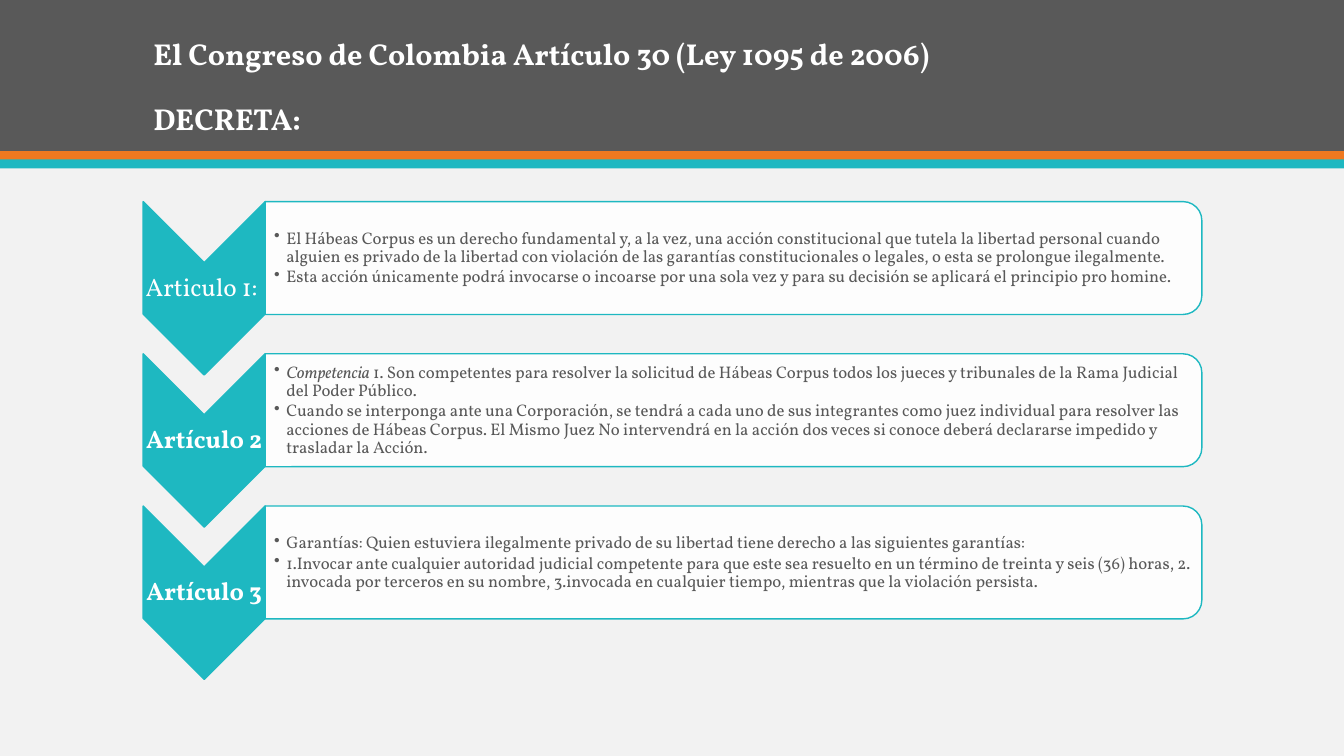
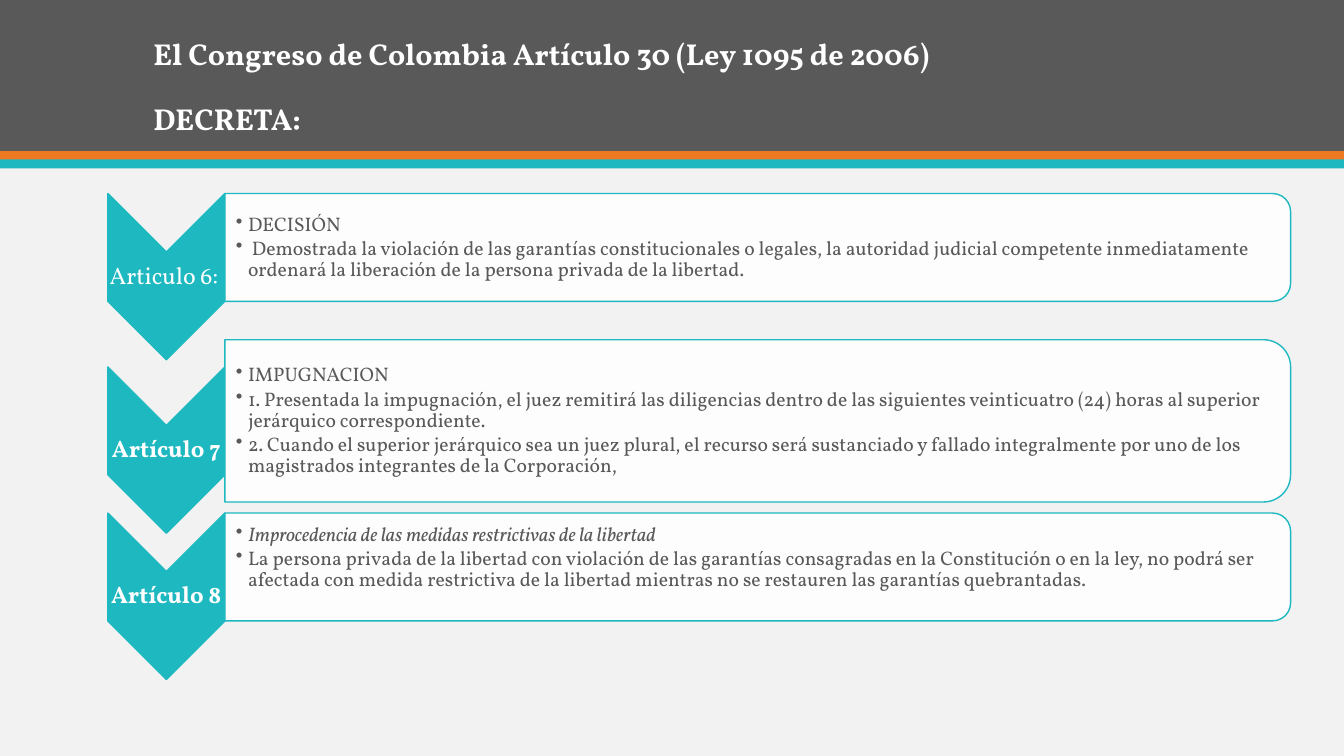
from dataclasses import dataclass

from lxml import etree
from pptx import Presentation
from pptx.dml.color import RGBColor
from pptx.enum.shapes import MSO_SHAPE
from pptx.enum.text import MSO_ANCHOR, MSO_AUTO_SIZE, PP_ALIGN
from pptx.oxml.ns import qn
from pptx.util import Emu, Pt

PX = 9144  # 100 px to the inch
SLIDE_W, SLIDE_H = 1333, 750


@dataclass(frozen=True)
class Theme:
    font: str = "Vollkorn"
    back: str = "F2F2F2"
    dark: str = "595959"
    orange: str = "EF7920"
    teal: str = "1EB8C1"
    white: str = "FFFFFF"
    title_size: float = 21.6
    title_gap: float = 23
    line_spacing: float = 0.9
    panel_alpha: int = 90000


THEME = Theme()

# Content
TITLE = ["El Congreso de Colombia Artículo 30 (Ley 1095 de 2006)", "DECRETA:"]
TITLE_BOX = (142, 28, 1050, 113)
BANDS = [(0, 150, THEME.dark), (150, 9, THEME.orange), (158, 9, THEME.teal)]  # top, height, colour

# Each bullet is a list of (text, italic) runs; tail is extra room under the bullets
SLIDES = [
    dict(
        left=142, chevron_w=121, chevron_h=172, panel_w=929, label_size=18, text_size=12, inset=9,
        rows=[
            dict(label="Articulo 1: ", bold=False, top=200, panel_top=200, panel_h=112, tail=0, bullets=[
                [("El Hábeas Corpus es un derecho fundamental y, a la vez, una acción constitucional que tutela "
                  "la libertad personal cuando alguien es privado de la libertad con violación de las garantías "
                  "constitucionales o legales, o esta se prolongue ilegalmente.", False)],
                [("Esta acción únicamente podrá invocarse o incoarse por una sola vez y para su decisión se "
                  "aplicará el principio pro homine.", False)],
            ]),
            dict(label="Artículo 2", bold=True, top=351, panel_top=351, panel_h=112, tail=0, bullets=[
                [("Competencia ", True),
                 ("1. Son competentes para resolver la solicitud de Hábeas Corpus todos los jueces y tribunales "
                  "de la Rama Judicial del Poder Público.", False)],
                [("Cuando se interponga ante una Corporación, se tendrá a cada uno de sus integrantes como juez "
                  "individual para resolver las acciones de Hábeas Corpus. El Mismo Juez No intervendrá en la "
                  "acción dos veces si conoce deberá declararse impedido y trasladar la Acción.", False)],
            ]),
            dict(label="Artículo 3", bold=True, top=502, panel_top=502, panel_h=112, tail=0, bullets=[
                [("Garantías: Quien estuviera ilegalmente privado de su libertad tiene derecho a las siguientes "
                  "garantías:", False)],
                [("1.Invocar ante cualquier autoridad judicial competente para que este sea resuelto en un "
                  "término de treinta y seis (36) horas, 2. invocada por terceros en su nombre, 3.invocada en "
                  "cualquier tiempo, mientras que la violación persista.", False)],
            ]),
        ],
    ),
    dict(
        left=107, chevron_w=116, chevron_h=165, panel_w=1057, label_size=17, text_size=14, inset=11,
        rows=[
            dict(label="Articulo 6: ", bold=False, top=192, panel_top=192, panel_h=107, tail=0, bullets=[
                [("DECISIÓN", False)],
                [(" Demostrada la violación de las garantías constitucionales o legales, la autoridad judicial "
                  "competente inmediatamente ordenará la liberación de la persona privada de la libertad.", False)],
            ]),
            dict(label="Artículo 7", bold=True, top=364, panel_top=337, panel_h=161, tail=0, bullets=[
                [("IMPUGNACION", False)],
                [("1. Presentada la impugnación, el juez remitirá las diligencias dentro de las siguientes "
                  "veinticuatro (24) horas al superior jerárquico correspondiente.", False)],
                [("2. Cuando el superior jerárquico sea un juez plural, el recurso será sustanciado y fallado "
                  "integralmente por uno de los magistrados integrantes de la Corporación,", False)],
            ]),
            dict(label="Artículo 8", bold=True, top=509, panel_top=509, panel_h=107, tail=19, bullets=[
                [("Improcedencia de las medidas restrictivas de la libertad", True)],
                [("La persona privada de la libertad con violación de las garantías consagradas en la "
                  "Constitución o en la ley, no podrá ser afectada con medida restrictiva de la libertad "
                  "mientras no se restauren las garantías quebrantadas.", False)],
            ]),
        ],
    ),
]


def px(value):
    return Emu(round(value * PX))


def rgb(color):
    return RGBColor.from_string(color)


def style_run(r, size, color, bold=False, italic=False):
    f = r.font
    f.name, f.size, f.bold, f.italic = THEME.font, Pt(size), bold, italic
    f.color.rgb = rgb(color)


def add_filled(slide, kind, x, y, w, h, color, line=None):
    sp = slide.shapes.add_shape(kind, px(x), px(y), px(w), px(h))
    sp.shadow.inherit = False
    sp.fill.solid()
    sp.fill.fore_color.rgb = rgb(color)
    if line:
        sp.line.color.rgb = rgb(line)
        sp.line.width = Pt(1)
    else:
        sp.line.fill.background()
    return sp


def add_turned(slide, kind, x, y, w, h, color):
    """Shape turned a quarter, given by the box it covers after turning."""
    sp = add_filled(slide, kind, x + (w - h) / 2, y + (h - w) / 2, h, w, color, THEME.teal)
    sp.rotation = 90
    return sp


def add_text(slide, x, y, w, h, left=1, bottom=1):
    tf = slide.shapes.add_textbox(px(x), px(y), px(w), px(h)).text_frame
    tf.word_wrap = True
    tf.vertical_anchor = MSO_ANCHOR.MIDDLE
    tf.margin_left, tf.margin_bottom = px(left), px(bottom)
    tf.margin_top = tf.margin_right = px(1)
    return tf


def add_bullet(p, runs, size):
    p.line_spacing = THEME.line_spacing
    p.space_after = Pt(size * 0.15)
    for text, italic in runs:
        r = p.add_run()
        r.text = text
        style_run(r, size, THEME.dark, italic=italic)
    pPr = p._p.get_or_add_pPr()
    pPr.set("marL", str(px(12)))
    pPr.set("indent", str(px(-12)))
    etree.SubElement(pPr, qn("a:buChar"), char="•")


def move_bands_to_layout(slide):
    """The bands are drawn once and belong to the layout."""
    tree = slide.slide_layout.shapes.element
    for i, (top, height, color) in enumerate(BANDS):
        band = add_filled(slide, MSO_SHAPE.RECTANGLE, 0, top, SLIDE_W, height, color)
        tree.insert(2 + i, band.element)


def set_title(slide):
    sp = slide.shapes.title
    sp.left, sp.top, sp.width, sp.height = map(px, TITLE_BOX)
    tf = sp.text_frame
    tf.text = "\n".join(TITLE)
    tf.word_wrap = True
    tf.auto_size = MSO_AUTO_SIZE.NONE
    tf.vertical_anchor = MSO_ANCHOR.BOTTOM
    for i, p in enumerate(tf.paragraphs):
        p.alignment = PP_ALIGN.LEFT
        p.line_spacing = THEME.line_spacing
        p.space_before = Pt(THEME.title_gap if i else 0)
        style_run(p.runs[0], THEME.title_size, THEME.white, bold=True)


def add_row(slide, data, row):
    x, w = data["left"], data["chevron_w"]

    # Chevron and its label
    add_turned(slide, MSO_SHAPE.CHEVRON, x, row["top"], w, data["chevron_h"], THEME.teal)
    tf = add_text(slide, x, row["top"] + w / 2, w, data["chevron_h"] - w)
    tf.text = row["label"]
    p = tf.paragraphs[0]
    p.alignment = PP_ALIGN.CENTER
    p.line_spacing = THEME.line_spacing
    style_run(p.runs[0], data["label_size"], THEME.white, bold=row["bold"])

    # Panel and its bullets, kept clear of the rounded corners
    px_left, top, pw, ph = x + w, row["panel_top"], data["panel_w"], row["panel_h"]
    panel = add_turned(slide, MSO_SHAPE.ROUND_2_SAME_RECTANGLE, px_left, top, pw, ph, THEME.white)
    color = panel.fill._xPr.find(qn("a:solidFill"))[0]
    etree.SubElement(color, qn("a:alpha"), val=str(THEME.panel_alpha))
    corner = round(ph * 0.05)
    tf = add_text(slide, px_left, top + corner, pw - corner, ph - 2 * corner,
                  left=data["inset"], bottom=1 + row["tail"])
    for i, runs in enumerate(row["bullets"]):
        p = tf.add_paragraph() if i else tf.paragraphs[0]
        add_bullet(p, runs, data["text_size"])


def main():
    prs = Presentation()
    prs.slide_width, prs.slide_height = px(SLIDE_W), px(SLIDE_H)
    fill = prs.slide_master.background.fill
    fill.solid()
    fill.fore_color.rgb = rgb(THEME.back)

    layout = prs.slide_layouts[5]
    for i, data in enumerate(SLIDES):
        slide = prs.slides.add_slide(layout)
        if i == 0:
            move_bands_to_layout(slide)
        set_title(slide)
        for row in data["rows"]:
            add_row(slide, data, row)
    prs.save("out.pptx")


if __name__ == "__main__":
    main()
